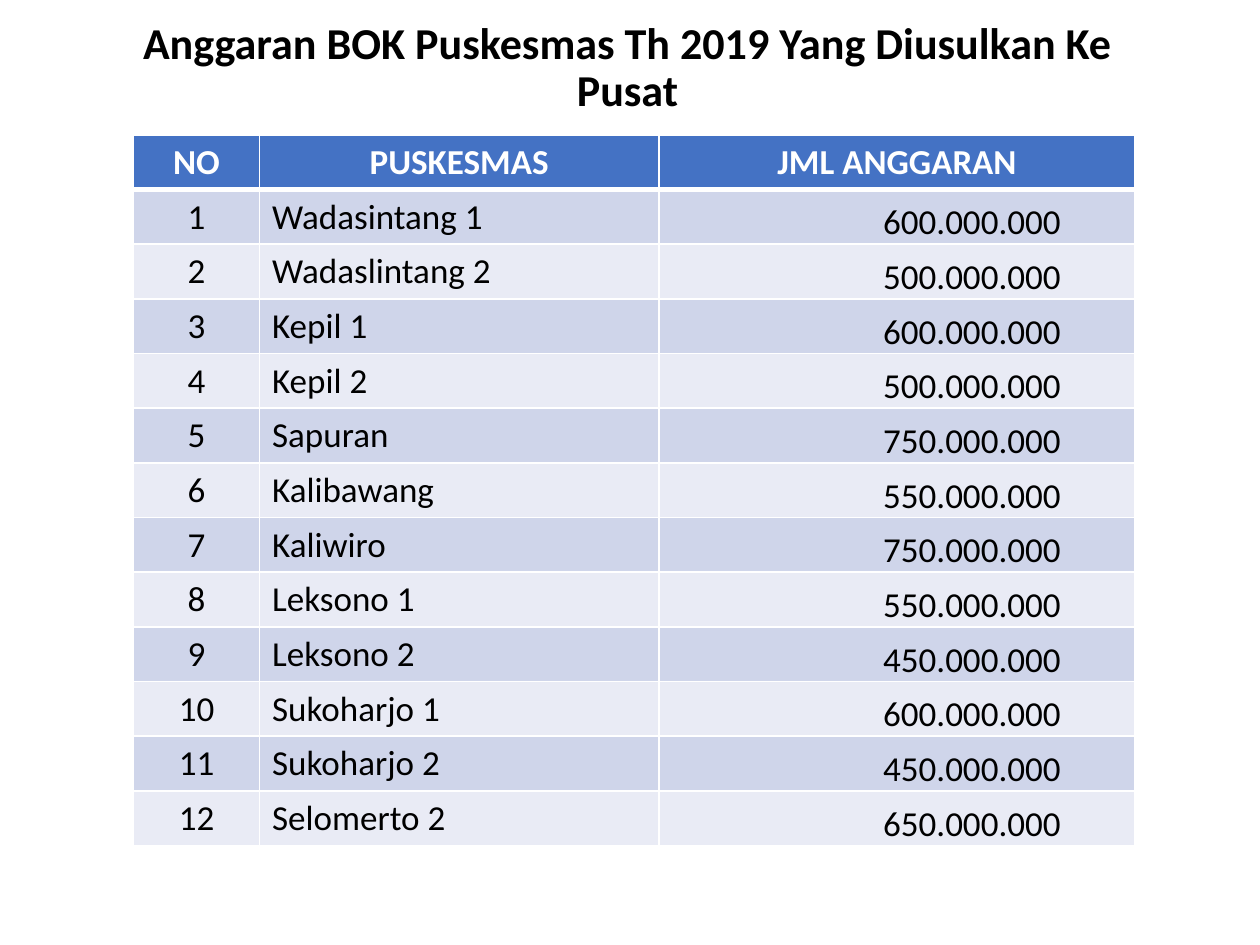
from dataclasses import dataclass

from lxml.etree import SubElement
from pptx import Presentation
from pptx.dml.color import RGBColor
from pptx.enum.text import MSO_ANCHOR, PP_ALIGN
from pptx.oxml.ns import qn
from pptx.util import Inches, Pt

COLORS = {
    "head": "4472C4",
    "odd": "CFD5EA",
    "even": "E9EBF5",
    "white": "FFFFFF",
    "black": "000000",
}
WIDTHS = (1, 3.17, 3.78)
ROW = 0.41


@dataclass
class Budget:
    center: str
    amount: str


BUDGETS = [
    Budget("Wadasintang 1", "600.000.000"),
    Budget("Wadaslintang 2", "500.000.000"),
    Budget("Kepil 1", "600.000.000"),
    Budget("Kepil 2", "500.000.000"),
    Budget("Sapuran", "750.000.000"),
    Budget("Kalibawang", "550.000.000"),
    Budget("Kaliwiro", "750.000.000"),
    Budget("Leksono 1", "550.000.000"),
    Budget("Leksono 2", "450.000.000"),
    Budget("Sukoharjo 1", "600.000.000"),
    Budget("Sukoharjo 2", "450.000.000"),
    Budget("Selomerto 2", "650.000.000"),
]


def write(frame, text: str, size: float = 20, color: str = "black",
          bold: bool = False, align=PP_ALIGN.CENTER, spacing: float = 1.0) -> None:
    para = frame.paragraphs[0]
    para.alignment = align
    para.line_spacing = spacing
    run = para.add_run()
    run.text = text
    font = run.font
    font.name = "Calibri"
    font.size = Pt(size)
    font.bold = bold
    font.color.rgb = RGBColor.from_string(COLORS[color])


def border(cell, top: float = 1, bottom: float = 1) -> None:
    """Draw white lines on all four sides, with widths in points."""
    props = cell._tc.get_or_add_tcPr()
    for side, width in (("L", 1), ("R", 1), ("T", top), ("B", bottom)):
        line = SubElement(props, qn(f"a:ln{side}"), w=str(Pt(width)))
        fill = SubElement(line, qn("a:solidFill"))
        SubElement(fill, qn("a:srgbClr"), val=COLORS["white"])


def paint(cell, color: str) -> None:
    cell.fill.solid()
    cell.fill.fore_color.rgb = RGBColor.from_string(COLORS[color])


def add_title(slide, text: str) -> None:
    box = slide.shapes.add_textbox(Inches(0.67), Inches(0.21), Inches(8.62), Inches(0.67))
    frame = box.text_frame
    frame.word_wrap = True
    frame.vertical_anchor = MSO_ANCHOR.MIDDLE
    write(frame, text, size=25.2, bold=True, spacing=0.9)


def add_budgets(slide, budgets: list[Budget]) -> None:
    count = len(budgets) + 1
    table = slide.shapes.add_table(
        count, len(WIDTHS), Inches(1.06), Inches(1.07),
        Inches(sum(WIDTHS)), Inches(ROW * count)).table
    for column, width in zip(table.columns, WIDTHS):
        column.width = Inches(width)
    for row in table.rows:
        row.height = Inches(ROW)

    for col, label in enumerate(("NO", "PUSKESMAS", "JML ANGGARAN")):
        cell = table.cell(0, col)
        border(cell, bottom=3)
        paint(cell, "head")
        write(cell.text_frame, label, color="white", bold=True)

    aligns = (PP_ALIGN.CENTER, PP_ALIGN.LEFT, PP_ALIGN.RIGHT)
    for num, budget in enumerate(budgets, 1):
        texts = (str(num), budget.center, budget.amount)
        for col, (text, align) in enumerate(zip(texts, aligns)):
            cell = table.cell(num, col)
            border(cell, top=3 if num == 1 else 1)
            paint(cell, "odd" if num % 2 else "even")
            write(cell.text_frame, text, align=align)
        cell = table.cell(num, 2)
        cell.vertical_anchor = MSO_ANCHOR.BOTTOM
        cell.margin_left = cell.margin_top = Inches(0.01)
        cell.margin_right = Inches(0.59)
        cell.margin_bottom = 0


def main() -> None:
    deck = Presentation()
    deck.slide_width, deck.slide_height = Inches(10), Inches(7.5)
    slide = deck.slides.add_slide(deck.slide_layouts[6])
    add_title(slide, "Anggaran BOK Puskesmas Th 2019 Yang Diusulkan Ke Pusat")
    add_budgets(slide, BUDGETS)
    deck.save("out.pptx")


if __name__ == "__main__":
    main()
